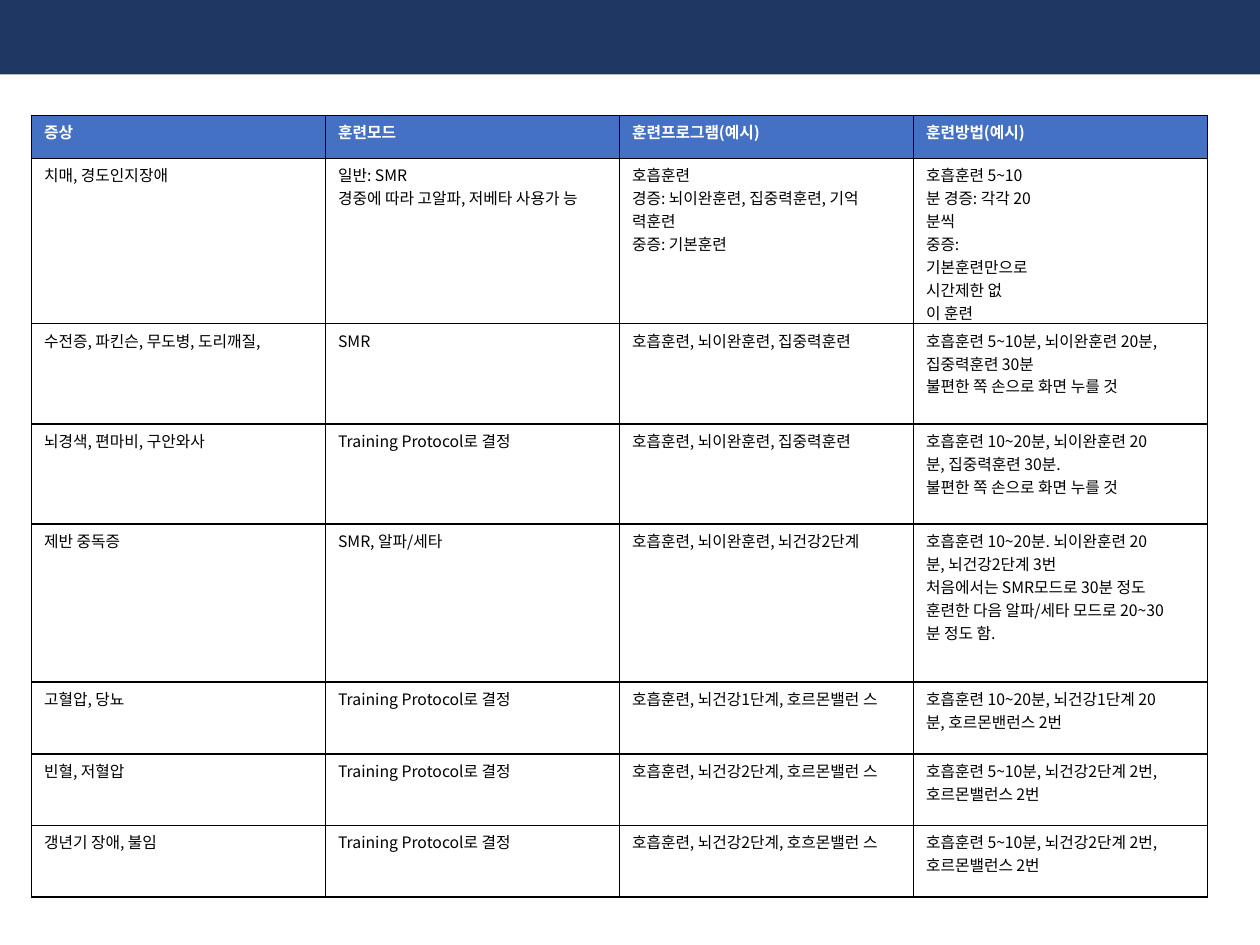
from lxml import etree
from pptx import Presentation
from pptx.dml.color import RGBColor
from pptx.enum import shapes
from pptx.oxml.ns import qn
from pptx.util import Pt

FONT = "Noto Sans CJK KR"
NAVY, BLUE, WHITE, BLACK = "1F3863", "4471C4", "FFFFFF", "000000"

PROTOCOL = "Training Protocol로 결정"
FOCUS = "호흡훈련, 뇌이완훈련, 집중력훈련"
PRESS = "불편한 쪽 손으로 화면 누를 것"
SHORT_PLAN = "호흡훈련 5~10분, 뇌건강2단계 2번,\n호르몬밸런스 2번"

# Each line of a cell is one paragraph
ROWS = [
    ("증상", "훈련모드", "훈련프로그램(예시)", "훈련방법(예시)"),
    ("치매, 경도인지장애",
     "일반: SMR\n경중에 따라 고알파, 저베타 사용가 능",
     "호흡훈련\n경증: 뇌이완훈련, 집중력훈련, 기억 력훈련\n중증: 기본훈련",
     "호흡훈련 5~10분 경증: 각각 20분씩\n중증: 기본훈련만으로 시간제한 없\n이 훈련"),
    ("수전증, 파킨슨, 무도병, 도리깨질,", "SMR", FOCUS,
     "호흡훈련 5~10분, 뇌이완훈련 20분,\n집중력훈련 30분\n" + PRESS),
    ("뇌경색, 편마비, 구안와사", PROTOCOL, FOCUS,
     "호흡훈련 10~20분, 뇌이완훈련 20\n분, 집중력훈련 30분.\n" + PRESS),
    ("제반 중독증", "SMR, 알파/세타", "호흡훈련, 뇌이완훈련, 뇌건강2단계",
     "호흡훈련 10~20분. 뇌이완훈련 20\n분, 뇌건강2단계 3번\n"
     "처음에서는 SMR모드로 30분 정도 훈련한 다음 알파/세타 모드로 20~30분 정도 함."),
    ("고혈압, 당뇨", PROTOCOL, "호흡훈련, 뇌건강1단계, 호르몬밸런 스",
     "호흡훈련 10~20분, 뇌건강1단계 20\n분, 호르몬밴런스 2번"),
    ("빈혈, 저혈압", PROTOCOL, "호흡훈련, 뇌건강2단계, 호르몬밸런 스", SHORT_PLAN),
    ("갱년기 장애, 불임", PROTOCOL, "호흡훈련, 뇌건강2단계, 호흐몬밸런 스", SHORT_PLAN),
]
ROW_HEIGHTS = [24.5, 92.5, 57.3, 57.3, 90.2, 41, 41, 41]
PROGRAM_COL = 2
# Wider right margins (row, column) for cells set to a narrow measure
NARROW = {(1, 3): 99, (4, 3): 20}


def color(hex_value):
    return RGBColor.from_string(hex_value)


def write_text(tf, content, size=9, fill=BLACK, bold=False):
    for i, line in enumerate(content.split("\n")):
        p = tf.paragraphs[0] if i == 0 else tf.add_paragraph()
        r = p.add_run()
        r.text = line
        r.font.name, r.font.size, r.font.bold = FONT, Pt(size), bold
        r.font.color.rgb = color(fill)
        etree.SubElement(r.font._element, qn("a:ea"), typeface=FONT)


def set_borders(cell, hex_value=BLACK, width=1):
    """Put lines on all four sides; they must come before the cell's fill."""
    tc_pr = cell._tc.get_or_add_tcPr()
    for i, side in enumerate(("lnL", "lnR", "lnT", "lnB")):
        ln = etree.Element(qn("a:" + side), w=str(Pt(width)))
        solid = etree.SubElement(ln, qn("a:solidFill"))
        etree.SubElement(solid, qn("a:srgbClr"), val=hex_value)
        tc_pr.insert(i, ln)


def add_top_band(s, x, y, w, h):
    sp = s.shapes.add_shape(shapes.MSO_SHAPE.RECTANGLE, Pt(x), Pt(y), Pt(w), Pt(h))
    sp.shadow.inherit = False
    sp.fill.solid()
    sp.fill.fore_color.rgb = color(NAVY)
    sp.line.fill.background()


def add_training_table(s, x, y, w):
    n_cols = len(ROWS[0])
    frame = s.shapes.add_table(len(ROWS), n_cols, Pt(x), Pt(y), Pt(w), Pt(sum(ROW_HEIGHTS)))
    table = frame.table
    table.horz_banding = table.first_row = False
    for col in table.columns:
        col.width = Pt(w / n_cols)
    for i, (row, height) in enumerate(zip(ROWS, ROW_HEIGHTS)):
        table.rows[i].height = Pt(height)
        header = i == 0
        for j, content in enumerate(row):
            cell = table.cell(i, j)
            cell.margin_left, cell.margin_top, cell.margin_bottom = Pt(7.2), Pt(3), Pt(0)
            cell.margin_right = Pt(NARROW.get((i, j), 8 if j == PROGRAM_COL else 0))
            if header:
                cell.fill.solid()
                cell.fill.fore_color.rgb = color(BLUE)
            else:
                cell.fill.background()
            set_borders(cell)
            write_text(cell.text_frame, content, fill=WHITE if header else BLACK, bold=header)


def main():
    prs = Presentation()
    prs.slide_width, prs.slide_height = Pt(720), Pt(540)
    s = prs.slides.add_slide(prs.slide_layouts[6])
    add_top_band(s, 0, 0, 720, 42.5)
    add_training_table(s, 18, 66, 672)
    prs.save("out.pptx")


if __name__ == "__main__":
    main()
